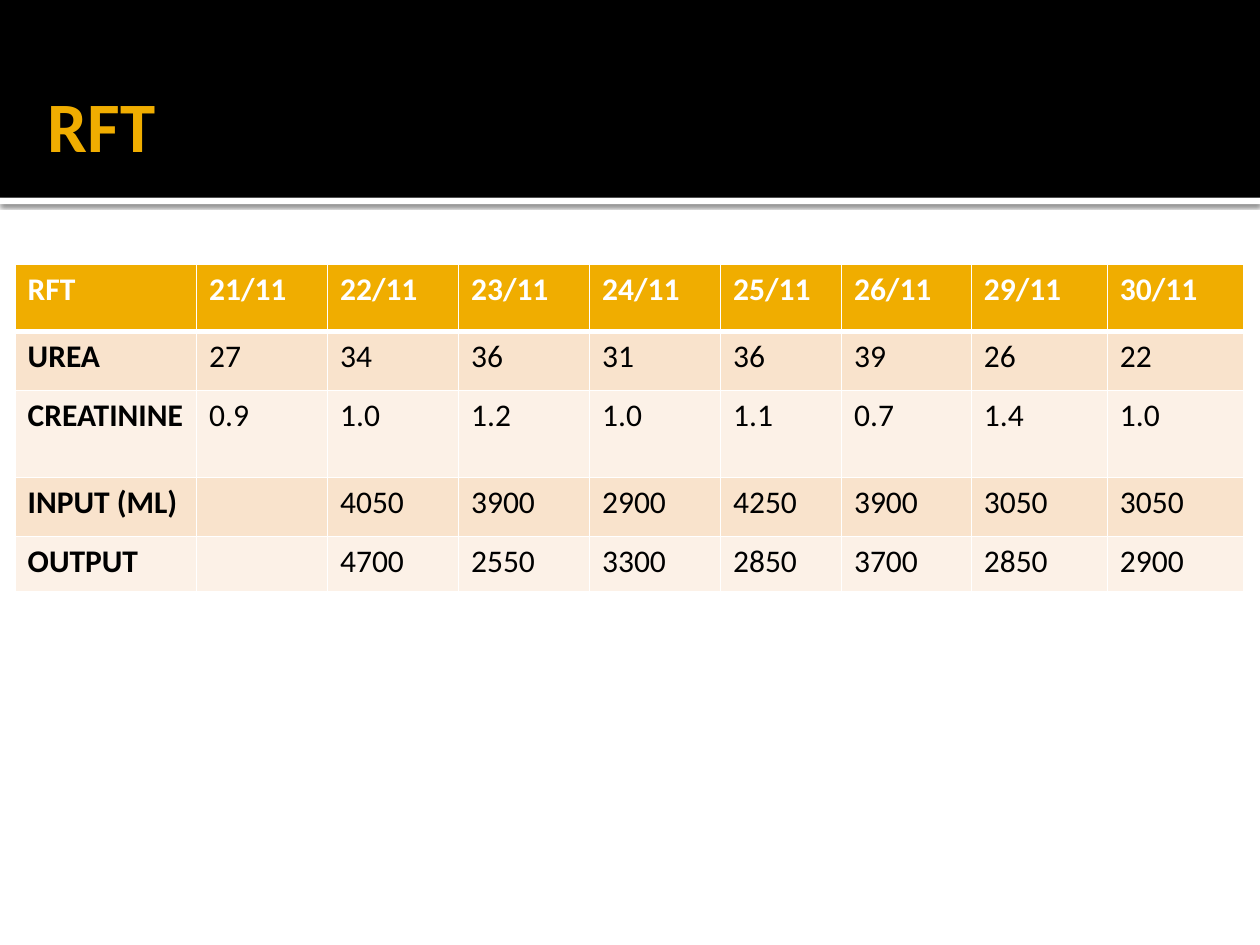
import pptx
import pptx.util
import pptx.dml.color
import pptx.enum.shapes
import pptx.enum.text
import pptx.oxml.ns
from lxml import etree
from pptx.util import Inches, Pt

TITLE = "RFT"
ROWS = [
    ["RFT", "21/11", "22/11", "23/11", "24/11", "25/11", "26/11", "29/11", "30/11"],
    ["UREA", "27", "34", "36", "31", "36", "39", "26", "22"],
    ["CREATININE", "0.9", "1.0", "1.2", "1.0", "1.1", "0.7", "1.4", "1.0"],
    ["INPUT (ML)", "", "4050", "3900", "2900", "4250", "3900", "3050", "3050"],
    ["OUTPUT", "", "4700", "2550", "3300", "2850", "3700", "2850", "2900"],
]
COLUMN_WIDTHS = [1.44, 1.04, 1.04, 1.04, 1.04, 0.96, 1.03, 1.08, 1.08]
ROW_HEIGHTS = [0.53, 0.47, 0.69, 0.47, 0.44]
TABLE_LEFT, TABLE_TOP = 0.12, 2.1
BAND_HEIGHT, RULE_HEIGHT = 1.57, 0.05

THEME = {
    "font": "Calibri",
    "accent": "F0AD00",
    "white": "FFFFFF",
    "black": "000000",
    "stripes": ["FCF1E7", "F9E3CC"],
    "title_size": 40.5,
    "table_size": 18,
    "border": 1,
    "header_border": 3,
}


def rgb(value):
    return pptx.dml.color.RGBColor.from_string(value)


def format_font(font, size, color, bold):
    values = {"name": THEME["font"], "size": Pt(size), "bold": bold}
    for name, value in values.items():
        setattr(font, name, value)
    font.color.rgb = rgb(color)


def add_element(parent, tag, **attributes):
    element = etree.SubElement(parent, pptx.oxml.ns.qn(tag))
    for name, value in attributes.items():
        element.set(name, str(value))
    return element


def add_band(slide, position, top, height, color):
    """Add a full-width band at a position in the stacking order."""
    band = slide.shapes.add_shape(
        pptx.enum.shapes.MSO_SHAPE.RECTANGLE,
        0, Inches(top), Inches(10), Inches(height),
    )
    band.shadow.inherit = False
    band.fill.solid()
    band.fill.fore_color.rgb = rgb(color)
    band.line.fill.background()
    slide.shapes._spTree.insert(2 + position, band._element)
    return band


def add_shadow(shape):
    effects = shape._element.spPr.find(pptx.oxml.ns.qn("a:effectLst"))
    shadow = add_element(effects, "a:outerShdw", blurRad=Pt(2.5), dist=Pt(0.8),
                         dir=90 * 60000, algn="tl", rotWithShape=0)
    color = add_element(shadow, "a:srgbClr", val=THEME["black"])
    add_element(color, "a:alpha", val=60000)


def set_borders(cell, widths):
    """Draw white borders, with widths keyed by side."""
    properties = cell._tc.get_or_add_tcPr()
    for index, side in enumerate("LRTB"):
        line = add_element(properties, f"a:ln{side}", w=Pt(widths[side]))
        fill = add_element(line, "a:solidFill")
        add_element(fill, "a:srgbClr", val=THEME["white"])
        properties.insert(index, line)


def add_title(slide):
    title = slide.shapes.title
    place = {"left": 0.28, "top": 0.6, "width": 2.06, "height": 0.77}
    for name, value in place.items():
        setattr(title, name, Inches(value))
    frame = title.text_frame
    frame.text = TITLE
    values = {
        "margin_left": Inches(0.1),
        "margin_top": Inches(0.05),
        "margin_right": Inches(0.05),
        "margin_bottom": Inches(0.05),
        "vertical_anchor": pptx.enum.text.MSO_ANCHOR.MIDDLE,
        "auto_size": pptx.enum.text.MSO_AUTO_SIZE.NONE,
        "word_wrap": True,
    }
    for name, value in values.items():
        setattr(frame, name, value)
    paragraph = frame.paragraphs[0]
    paragraph.alignment = pptx.enum.text.PP_ALIGN.LEFT
    format_font(paragraph.runs[0].font, THEME["title_size"], THEME["accent"], True)


def add_results_table(slide):
    table = slide.shapes.add_table(
        len(ROWS), len(COLUMN_WIDTHS), Inches(TABLE_LEFT), Inches(TABLE_TOP),
        Inches(sum(COLUMN_WIDTHS)), Inches(sum(ROW_HEIGHTS)),
    ).table
    for column, width in zip(table.columns, COLUMN_WIDTHS):
        column.width = Inches(width)
    for row, height in zip(table.rows, ROW_HEIGHTS):
        row.height = Inches(height)

    for row_index, row in enumerate(ROWS):
        header = row_index == 0
        fill = THEME["accent"] if header else THEME["stripes"][row_index % 2]
        color = THEME["white"] if header else THEME["black"]
        widths = dict.fromkeys("LRTB", THEME["border"])
        if header:
            widths["B"] = THEME["header_border"]
        elif row_index == 1:
            widths["T"] = THEME["header_border"]
        for column_index, text in enumerate(row):
            cell = table.cell(row_index, column_index)
            cell.fill.solid()
            cell.fill.fore_color.rgb = rgb(fill)
            set_borders(cell, widths)
            if text:
                cell.text = text
                font = cell.text_frame.paragraphs[0].runs[0].font
                format_font(font, THEME["table_size"], color,
                            header or column_index == 0)


def main():
    presentation = pptx.Presentation()
    presentation.slide_width = Inches(10)
    presentation.slide_height = Inches(7.5)
    slide = presentation.slides.add_slide(presentation.slide_layouts[5])
    slide.background.fill.solid()
    slide.background.fill.fore_color.rgb = rgb(THEME["white"])
    rule = add_band(slide, 0, BAND_HEIGHT, RULE_HEIGHT, THEME["white"])
    add_shadow(rule)
    add_band(slide, 1, 0, BAND_HEIGHT, THEME["black"])
    add_title(slide)
    add_results_table(slide)
    presentation.save("out.pptx")


if __name__ == "__main__":
    main()
